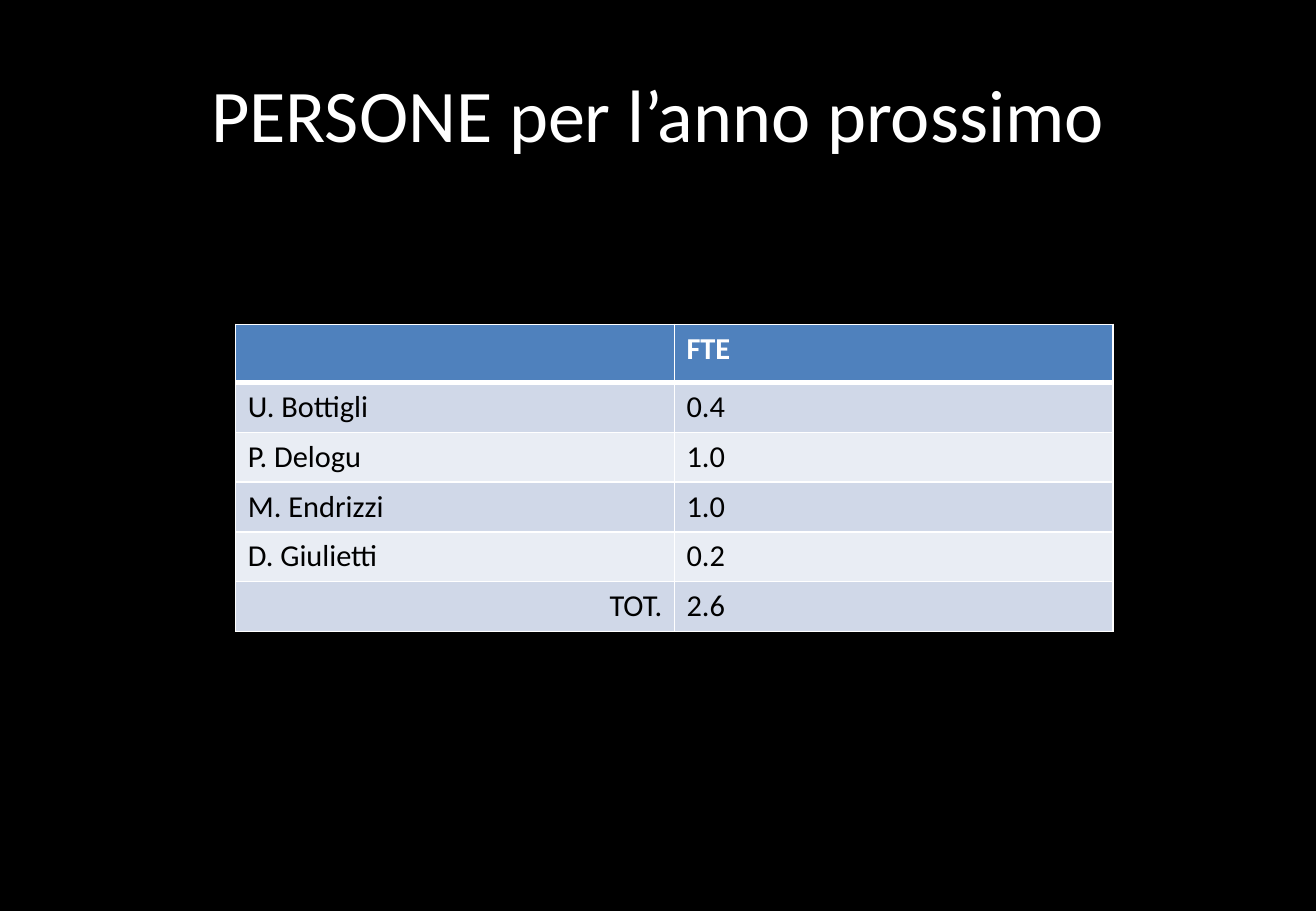
from lxml import etree
from pptx import Presentation
from pptx.dml.color import RGBColor
from pptx.enum import text
from pptx.oxml import ns
from pptx.util import Inches, Pt

BLACK = RGBColor(0x00, 0x00, 0x00)
WHITE = RGBColor(0xFF, 0xFF, 0xFF)
HEADER_BLUE = RGBColor(0x4F, 0x81, 0xBD)
BAND_DARK = RGBColor(0xD0, 0xD8, 0xE8)
BAND_LIGHT = RGBColor(0xE9, 0xED, 0xF4)
FONT = "Calibri"

ROWS = [
    ("", "FTE"),
    ("U. Bottigli", "0.4"),
    ("P. Delogu", "1.0"),
    ("M. Endrizzi", "1.0"),
    ("D. Giulietti", "0.2"),
    ("TOT.", "2.6"),
]


def add_run(p, words, size, color, bold=False):
    """Add one formatted run to a paragraph."""
    r = p.add_run()
    r.text = words
    r.font.name = FONT
    r.font.size = Pt(size)
    r.font.bold = bold
    r.font.color.rgb = color


def set_borders(cell, widths):
    """Draw white cell borders, given widths in points by side."""
    tcPr = cell._tc.get_or_add_tcPr()
    for i, (side, width) in enumerate(widths.items()):
        ln = etree.Element(ns.qn(f"a:ln{side}"), w=str(Pt(width)))
        fill = etree.SubElement(ln, ns.qn("a:solidFill"))
        etree.SubElement(fill, ns.qn("a:srgbClr"), val=str(WHITE))
        tcPr.insert(i, ln)


def add_title(slide, words, left, top, width, height):
    """Place the title placeholder in the given box."""
    sp = slide.shapes.title
    sp.left, sp.top, sp.width, sp.height = map(Inches, (left, top, width, height))
    tf = sp.text_frame
    tf.vertical_anchor = text.MSO_ANCHOR.MIDDLE
    p = tf.paragraphs[0]
    p.alignment = text.PP_ALIGN.CENTER
    add_run(p, words, 44, WHITE)


def add_people_table(slide, left, top, width, header_height, row_height):
    """Build the table of people with a header and banded rows."""
    height = header_height + row_height * (len(ROWS) - 1)
    box = map(Inches, (left, top, width, height))
    table = slide.shapes.add_table(len(ROWS), len(ROWS[0]), *box).table
    for col in table.columns:
        col.width = Inches(width / len(ROWS[0]))
    for i, row in enumerate(ROWS):
        header = i == 0
        table.rows[i].height = Inches(header_height if header else row_height)
        band = BAND_DARK if i % 2 else BAND_LIGHT
        for j, words in enumerate(row):
            cell = table.cell(i, j)
            cell.fill.solid()
            cell.fill.fore_color.rgb = HEADER_BLUE if header else band
            set_borders(cell, {"L": 1, "R": 1, "T": 3 if i == 1 else 1,
                               "B": 3 if header else 1})
            p = cell.text_frame.paragraphs[0]
            if words == "TOT.":
                p.alignment = text.PP_ALIGN.RIGHT
            if words:
                add_run(p, words, 18, WHITE if header else BLACK, header)


def main():
    """Build the slide and save it."""
    prs = Presentation()
    prs.slide_width, prs.slide_height = Inches(10.83), Inches(7.5)
    slide = prs.slides.add_slide(prs.slide_layouts[5])
    slide.background.fill.solid()
    slide.background.fill.fore_color.rgb = BLACK
    add_title(slide, "PERSONE per l’anno prossimo", 0.54, 0.3, 9.75, 1.25)
    add_people_table(slide, 1.94, 2.67, 7.22, 0.48, 0.41)
    prs.save("out.pptx")


if __name__ == "__main__":
    main()
